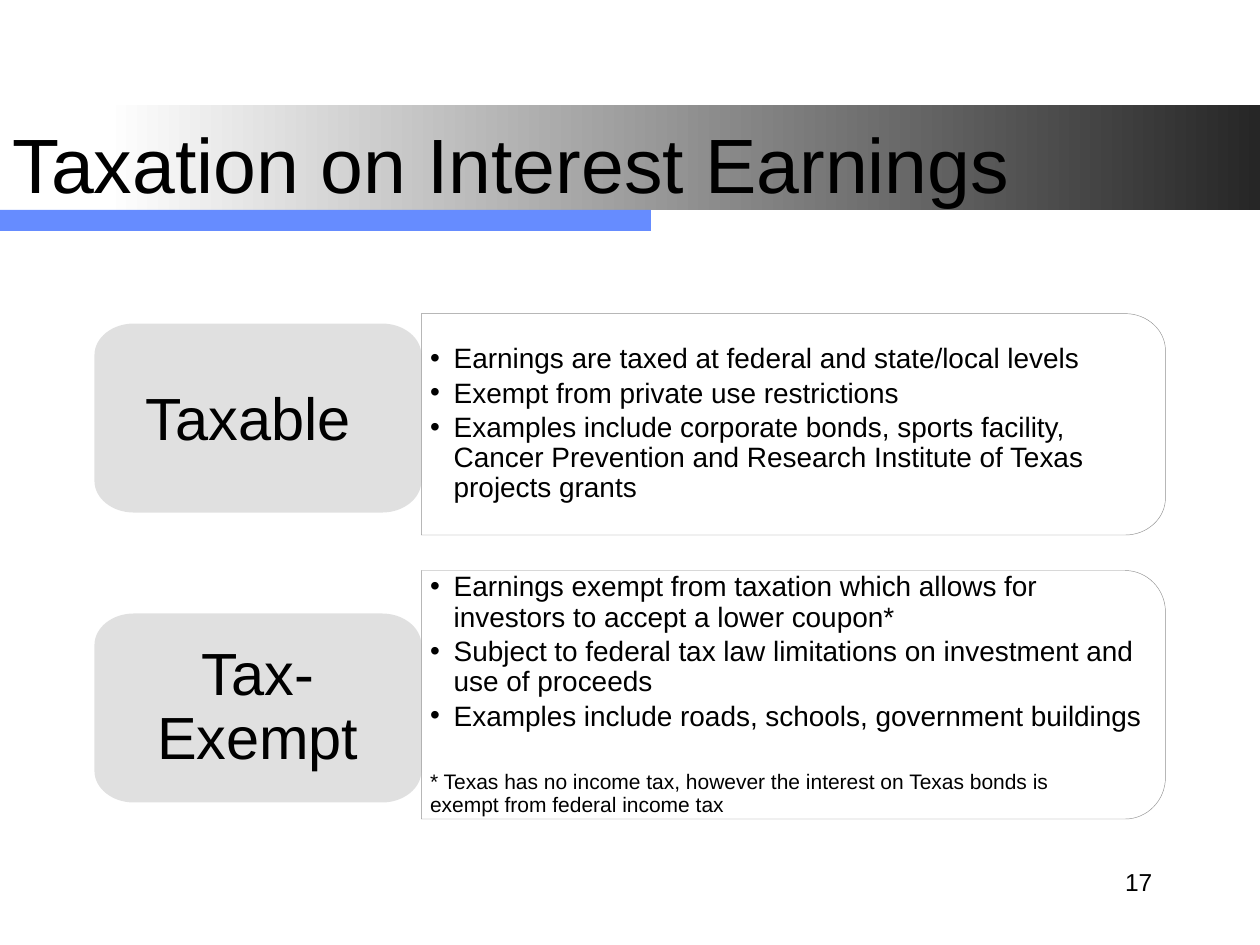
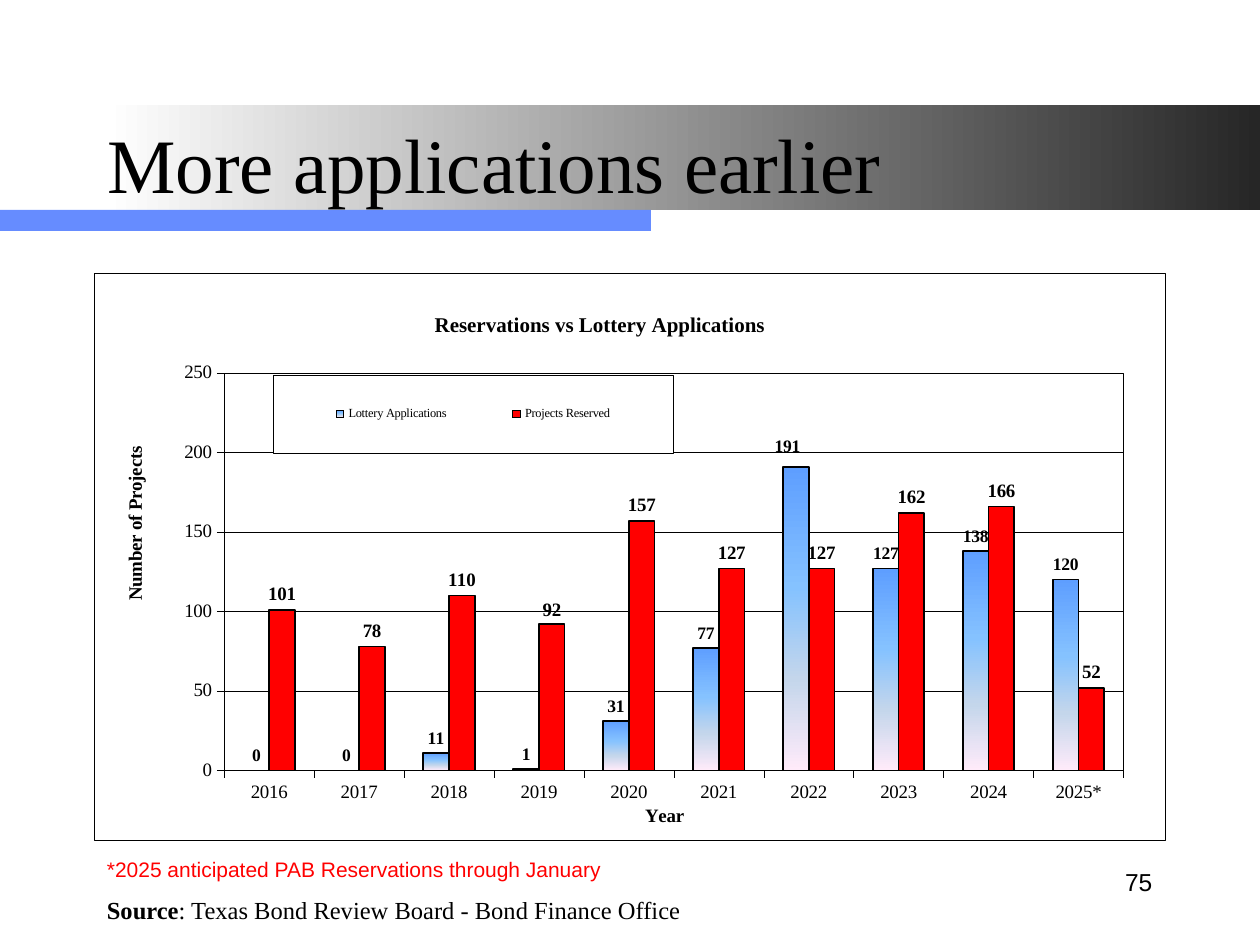
from dataclasses import dataclass

from lxml.etree import SubElement
from pptx import Presentation
from pptx.chart.data import CategoryChartData
from pptx.dml.color import RGBColor
from pptx.enum.chart import XL_CHART_TYPE, XL_LABEL_POSITION, XL_LEGEND_POSITION, XL_TICK_MARK
from pptx.enum.shapes import MSO_SHAPE
from pptx.enum.text import MSO_ANCHOR, MSO_AUTO_SIZE, PP_ALIGN
from pptx.oxml import parse_xml
from pptx.oxml.ns import nsdecls, qn
from pptx.util import Pt

COLORS = {
    "black": "000000",
    "white": "FFFFFF",
    "band_end": "262626",
    "blue": "668CFF",
    "gray": "868686",
    "red": "FF0000",
}
LOTTERY_STOPS = [(0, "5E9EFF"), (40, "85C2FF"), (70, "C4D6EB"), (100, "FFEBFA")]
SANS, SERIF = "Arial", "Times New Roman"
ARC = 0.55  # share of the way to the corner at which a quarter arc has its handles


@dataclass(frozen=True)
class Box:
    left: float
    top: float
    width: float
    height: float

    def emu(self) -> tuple:
        return Pt(self.left), Pt(self.top), Pt(self.width), Pt(self.height)


@dataclass(frozen=True)
class Run:
    text: str
    size: float
    font: str = SANS
    color: str = "black"
    bold: bool = False


@dataclass(frozen=True)
class TaxStatus:
    label: list[Run]
    label_top: float
    detail_top: float
    detail_height: float
    detail_radius: float
    bullets: list[str]
    footnote: tuple[str, ...] = ()


TAX_STATUSES = [
    TaxStatus(
        [Run("Taxable", 34), Run(" ", 40)], 184.9, 179.2, 126.5, 21.1,
        [
            "Earnings are taxed at federal and state/local levels",
            "Exempt from private use restrictions",
            "Examples include corporate bonds, sports facility, Cancer Prevention and "
            "Research Institute of Texas projects grants",
        ],
    ),
    TaxStatus(
        [Run("Tax-Exempt", 34)], 350.6, 326, 142, 23.7,
        [
            "Earnings exempt from taxation which allows for investors to accept a lower coupon*",
            "Subject to federal tax law limitations on investment and use of proceeds",
            "Examples include roads, schools, government buildings",
        ],
        ("* Texas has no income tax, however the interest on Texas bonds is",
         "exempt from federal income tax"),
    ),
]

YEARS = [str(year) for year in range(2016, 2025)] + ["2025*"]
LOTTERY = [0, 0, 11, 1, 31, 77, 191, 127, 138, 120]
RESERVED = [101, 78, 110, 92, 157, 127, 127, 162, 166, 52]


def rgb(name: str) -> RGBColor:
    return RGBColor.from_string(COLORS[name])


def style_font(font, size: float, name: str = SERIF, color: str = "black", bold: bool = False):
    font.size, font.name, font.bold = Pt(size), name, bold
    font.color.rgb = rgb(color)


def add_runs(p, runs: list[Run]):
    for run in runs:
        r = p.add_run()
        r.text = run.text
        style_font(r.font, run.size, run.font, run.color, run.bold)


def set_margins(tf, left: float, top: float, right: float, bottom: float):
    tf.margin_left, tf.margin_top = Pt(left), Pt(top)
    tf.margin_right, tf.margin_bottom = Pt(right), Pt(bottom)


def fill_gradient(fill, owner, stops: list[tuple[int, str]], angle: float):
    """Give the fill inside the owner element any number of (percent, hex) stops."""
    fill.gradient()
    fill.gradient_angle = angle
    gs_lst = owner.find(".//" + qn("a:gsLst"))
    for old in list(gs_lst):
        gs_lst.remove(old)
    for percent, color in stops:
        gs = SubElement(gs_lst, qn("a:gs"), pos=str(percent * 1000))
        SubElement(gs, qn("a:srgbClr"), val=color)


def set_alpha(sp, percent: int):
    for color in sp.element.spPr.iter(qn("a:srgbClr")):
        SubElement(color, qn("a:alpha"), val=str(percent * 1000))


def add_bands(slide, layout):
    """Draw the bands behind every slide by placing them on the layout."""
    boxes = [Box(60, 60, 660, 60), Box(0, 120, 372, 12)]
    bands = [slide.shapes.add_shape(MSO_SHAPE.RECTANGLE, *box.emu()) for box in boxes]
    title_band, underline = bands
    stops = [(0, COLORS["white"]), (100, COLORS["band_end"])]
    fill_gradient(title_band.fill, title_band.element, stops, 0)
    underline.fill.solid()
    underline.fill.fore_color.rgb = rgb("blue")
    for sp in bands:
        sp.line.fill.background()
        sp.shadow.inherit = False
        layout.shapes.element.append(sp.element)


def add_text(slide, box: Box, runs: list[Run], align=PP_ALIGN.LEFT, anchor=MSO_ANCHOR.TOP):
    tf = slide.shapes.add_textbox(*box.emu()).text_frame
    tf.word_wrap = True
    tf.vertical_anchor = anchor
    p = tf.paragraphs[0]
    p.alignment = align
    add_runs(p, runs)


def add_titled_slide(prs, title: Run, box: Box, number: str):
    slide = prs.slides.add_slide(prs.slide_layouts[5])
    sp = slide.shapes.title
    sp.left, sp.top, sp.width, sp.height = box.emu()
    tf = sp.text_frame
    tf.auto_size = MSO_AUTO_SIZE.NONE
    tf.vertical_anchor = MSO_ANCHOR.MIDDLE
    p = tf.paragraphs[0]
    p.alignment = PP_ALIGN.LEFT
    add_runs(p, [title])
    add_text(slide, Box(515.6, 486, 150, 36), [Run(number, 14)], PP_ALIGN.RIGHT, MSO_ANCHOR.MIDDLE)
    return slide


def curve_corners(sp, rounded: int):
    """Turn the first and last cut corners of an eight-sided outline into arcs."""
    path = sp.element.find(".//" + qn("a:path"))
    w, h = int(path.get("w")), int(path.get("h"))
    points = [(int(pt.get("x")), int(pt.get("y"))) for pt in path.iter(qn("a:pt"))]
    sides = path.findall(qn("a:lnTo"))
    corners = [(w, h), (0, h), (0, 0), (w, 0)]
    for i in range(4) if rounded == 4 else (0, 3):
        start, end = points[2 * i + 1], points[2 * i + 2]
        handles = [
            tuple(round(a + ARC * (c - a)) for a, c in zip(point, corners[i]))
            for point in (start, end)
        ]
        side = sides[2 * i + 1]
        side.tag = qn("a:cubicBezTo")
        for old in list(side):
            side.remove(old)
        for x, y in (*handles, end):
            SubElement(side, qn("a:pt"), x=str(x), y=str(y))


def add_rounded(slide, box: Box, rx: float, ry: float, rounded: int):
    """Outline a box with elliptical corners: all 4, or the 2 on the right."""
    left, top = box.left, box.top
    right, bottom = left + box.width, top + box.height
    left_rx, left_ry = (rx, ry) if rounded == 4 else (0, 0)
    outline = [
        (right, top + ry), (right, bottom - ry),
        (right - rx, bottom), (left + left_rx, bottom),
        (left, bottom - left_ry), (left, top + left_ry),
        (left + left_rx, top), (right - rx, top),
    ]
    points = [(Pt(x), Pt(y)) for x, y in outline]
    builder = slide.shapes.build_freeform(*points[0])
    builder.add_line_segments(points[1:] + points[:1], close=True)
    sp = builder.convert_to_shape()
    curve_corners(sp, rounded)
    sp.shadow.inherit = False
    sp.text_frame.word_wrap = True
    sp.text_frame.vertical_anchor = MSO_ANCHOR.MIDDLE
    return sp


def add_detail(slide, status: TaxStatus):
    box = Box(240.8, status.detail_top, 425.2, status.detail_height)
    sp = add_rounded(slide, box, 23, status.detail_radius, 2)
    sp.fill.background()
    sp.line.color.rgb = rgb("gray")
    sp.line.width = Pt(0.25)
    set_alpha(sp, 90)
    tf = sp.text_frame
    set_margins(tf, 5, 8.6, 10.8, 8.6)
    for i, text in enumerate(status.bullets):
        p = tf.paragraphs[0] if i == 0 else tf.add_paragraph()
        p.alignment, p.line_spacing, p.space_after = PP_ALIGN.LEFT, 0.9, Pt(2.4)
        pPr = p._p.get_or_add_pPr()
        pPr.set("marL", str(Pt(13.5)))
        pPr.set("indent", str(Pt(-13.5)))
        SubElement(pPr, qn("a:buFont"), typeface=SANS)
        SubElement(pPr, qn("a:buChar"), char="•")
        add_runs(p, [Run(text, 16)])
    if status.footnote:
        p = tf.add_paragraph()
        p.alignment, p.line_spacing, p.space_before = PP_ALIGN.LEFT, 0.9, Pt(20)
        first, second = status.footnote
        add_runs(p, [Run(first, 12)])
        p.add_line_break()
        add_runs(p, [Run(second, 12)])


def add_label(slide, status: TaxStatus):
    sp = add_rounded(slide, Box(54, status.label_top, 186.8, 108), 22.5, 18, 4)
    sp.fill.solid()
    sp.fill.fore_color.rgb = rgb("gray")
    set_alpha(sp, 25)
    sp.line.fill.background()
    set_margins(sp.text_frame, 19.4, 13.7, 19.4, 13.7)
    p = sp.text_frame.paragraphs[0]
    p.alignment, p.line_spacing = PP_ALIGN.CENTER, 0.9
    add_runs(p, status.label)


def place(element, modes: dict[str, str], **fractions: float):
    """Set a chart part's manual layout, in fractions of the chart."""
    for old in element.findall(qn("c:layout")):
        element.remove(old)
    layout = parse_xml(f"<c:layout {nsdecls('c')}><c:manualLayout/></c:layout>")
    for tag, value in (modes | fractions).items():
        SubElement(layout[0], qn("c:" + tag), val=str(value))
    before = [qn("c:tx"), qn("c:legendPos"), qn("c:idx")]
    element.insert(sum(child.tag in before for child in element), layout)


EDGE = {"xMode": "edge", "yMode": "edge"}
INNER = {"layoutTarget": "inner"} | EDGE


def framed(fill: str):
    return parse_xml(
        f"<c:spPr {nsdecls('c', 'a')}>{fill}<a:ln w='{Pt(0.25)}'><a:solidFill>"
        f"<a:srgbClr val='{COLORS['black']}'/></a:solidFill></a:ln></c:spPr>"
    )


def set_chart_title(title, text: str, size: float, x: float, y: float):
    add_runs(title.text_frame.paragraphs[0], [Run(text, size, SERIF, bold=True)])
    place(title._element, EDGE, x=x, y=y)


def set_thin_line(line, width: float = 0.25):
    line.color.rgb = rgb("black")
    line.width = Pt(width)


def style_axis(axis):
    axis.major_tick_mark = XL_TICK_MARK.OUTSIDE
    axis.minor_tick_mark = XL_TICK_MARK.NONE
    style_font(axis.tick_labels.font, 10.8)
    set_thin_line(axis.format.line)


def add_reservations_chart(slide):
    data = CategoryChartData()
    data.categories = YEARS
    data.add_series("Lottery Applications", LOTTERY)
    data.add_series("Projects Reserved", RESERVED)
    box = Box(54, 156, 612, 324)
    chart = slide.shapes.add_chart(XL_CHART_TYPE.COLUMN_CLUSTERED, *box.emu(), data).chart
    style_font(chart.font, 10, SANS)

    category, value = chart.category_axis, chart.value_axis
    set_chart_title(chart.chart_title, "Reservations vs Lottery Applications", 12, 0.314, 0.061)
    set_chart_title(category.axis_title, "Year", 10.8, 0.511, 0.931)
    set_chart_title(value.axis_title, "Number of Projects", 10.8, 0.024, 0.3)
    style_axis(category)
    style_axis(value)
    value.minimum_scale, value.maximum_scale, value.major_unit = 0, 250, 50
    set_thin_line(value.major_gridlines.format.line)

    chart.has_legend = True
    legend = chart.legend
    legend.position = XL_LEGEND_POSITION.RIGHT
    legend.include_in_layout = False
    style_font(legend.font, 7.1)
    place(legend._element, EDGE, x=0.167, y=0.18, w=0.373, h=0.137)
    white = f"<a:solidFill><a:srgbClr val='{COLORS['white']}'/></a:solidFill>"
    for element in (chart._chartSpace, legend._element):
        element.find(qn("c:txPr")).addprevious(framed(white))

    plot = chart.plots[0]
    plot.gap_width, plot.overlap, plot.vary_by_categories = 150, 0, False
    plot_area = chart._chartSpace.chart.plotArea
    place(plot_area, INNER, x=0.121, y=0.176, w=0.84, h=0.702)
    plot_area.append(framed("<a:noFill/>"))

    lottery, reserved = plot.series
    fill_gradient(lottery.format.fill, lottery._element, LOTTERY_STOPS, 270)
    reserved.format.fill.solid()
    reserved.format.fill.fore_color.rgb = rgb("red")
    for series, size, moved, dx, dy in (
        (lottery, 10, 6, -0.008, -0.009), (reserved, 10.8, 3, 0, 0.003)
    ):
        set_thin_line(series.format.line, 1)
        series.invert_if_negative = False
        series.data_labels.show_value = True
        moved_label = series.points[moved].data_label
        for labels in (series.data_labels, moved_label):
            labels.position = XL_LABEL_POSITION.OUTSIDE_END
            style_font(labels.font, size, bold=True)
        place(series._element.find(".//" + qn("c:dLbl")), {}, x=dx, y=dy)


def main():
    prs = Presentation()
    prs.slide_width, prs.slide_height = Pt(720), Pt(540)

    taxation = add_titled_slide(
        prs, Run("Taxation on Interest Earnings", 44), Box(0, 48, 666, 90), "17")
    add_bands(taxation, prs.slide_layouts[5])
    for status in TAX_STATUSES:
        add_detail(taxation, status)
        add_label(taxation, status)

    applications = add_titled_slide(
        prs, Run("More applications earlier", 44, SERIF), Box(54, 48, 612, 90), "75")
    add_reservations_chart(applications)
    add_text(applications, Box(54, 486, 320.4, 21.6),
             [Run("*2025 anticipated PAB Reservations through January", 12, color="red")])
    add_text(applications, Box(54, 508, 360, 24.5), [
        Run("Source", 14, SERIF, bold=True),
        Run(": Texas Bond Review Board - Bond Finance Office", 14, SERIF),
    ])
    prs.save("out.pptx")


if __name__ == "__main__":
    main()
